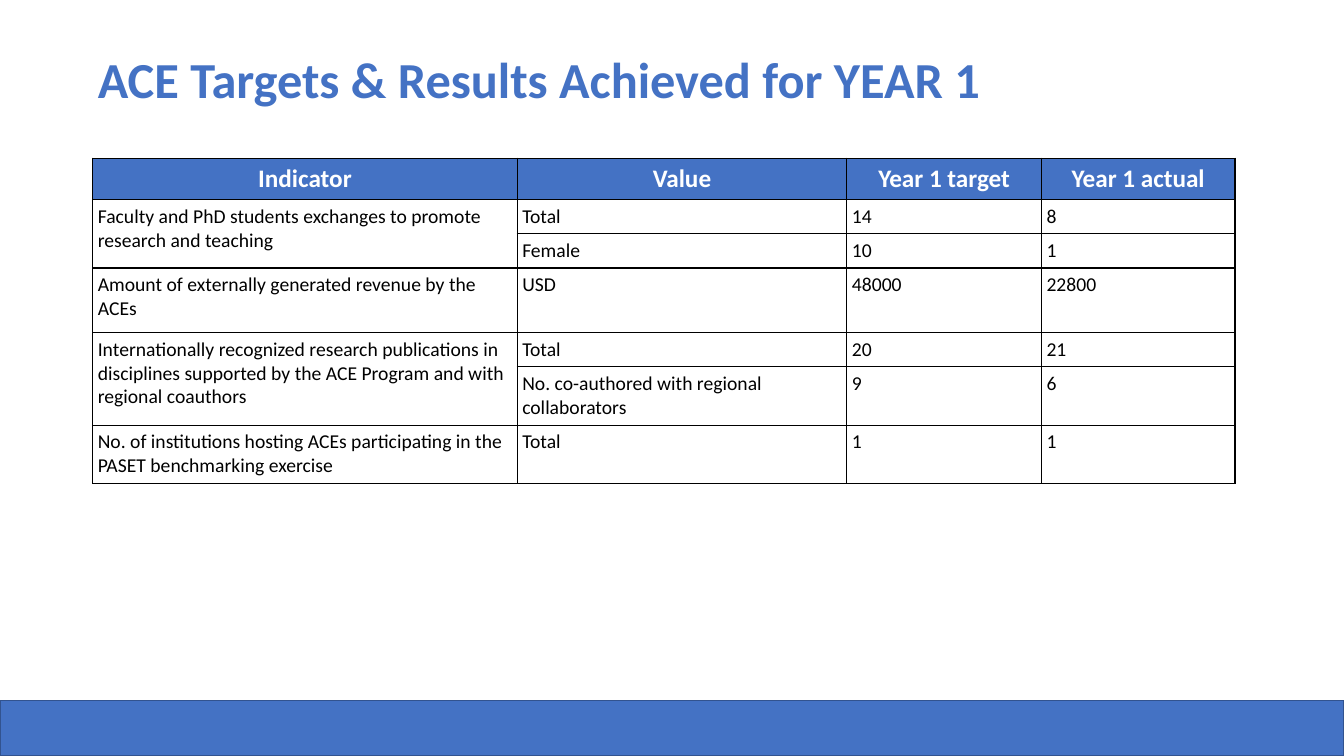
import pptx
import pptx.dml.color
import pptx.enum.shapes
import pptx.enum.text
import pptx.oxml
import pptx.oxml.ns
import pptx.util

Inches = pptx.util.Inches
Pt = pptx.util.Pt
FONT = "Calibri"
COLORS = {
    "blue": "4472C4",
    "edge": "32538F",
    "white": "FFFFFF",
    "black": "000000",
}
COLUMN_WIDTHS = [4.21, 3.27, 1.93, 1.92]
ROW_HEIGHTS = [0.41, 0.34, 0.34, 0.64, 0.34, 0.58, 0.58]
HEADER = ["Indicator", "Value", "Year 1 target", "Year 1 actual"]
INDICATORS = [
    ("Faculty and PhD students exchanges to promote research and teaching",
     [("Total", "14", "8"), ("Female", "10", "1")]),
    ("Amount of externally generated revenue by the ACEs",
     [("USD", "48000", "22800")]),
    ("Internationally recognized research publications in disciplines "
     "supported by the ACE Program and with regional coauthors",
     [("Total", "20", "21"),
      ("No. co-authored with regional collaborators", "9", "6")]),
    ("No. of institutions hosting ACEs participating in the PASET "
     "benchmarking exercise",
     [("Total", "1", "1")]),
]


def rgb(name):
    return pptx.dml.color.RGBColor.from_string(COLORS[name])


def format_text(tf, size, color, bold):
    for p in tf.paragraphs:
        for r in p.runs:
            r.font.name = FONT
            r.font.size = Pt(size)
            r.font.bold = bold
            r.font.color.rgb = rgb(color)


def set_margins(box):
    box.margin_left = box.margin_right = Inches(0.05)
    box.margin_top = box.margin_bottom = Inches(0.05)


def add_footer(slide, left, top, width, height):
    sp = slide.shapes.add_shape(
        pptx.enum.shapes.MSO_SHAPE.RECTANGLE,
        Inches(left), Inches(top), Inches(width), Inches(height))
    sp.shadow.inherit = False
    sp.fill.solid()
    sp.fill.fore_color.rgb = rgb("blue")
    sp.line.color.rgb = rgb("edge")
    sp.line.width = Pt(1)


def add_title(slide, left, top, width, height):
    sp = slide.shapes.add_textbox(
        Inches(left), Inches(top), Inches(width), Inches(height))
    tf = sp.text_frame
    tf.word_wrap = True
    tf.vertical_anchor = pptx.enum.text.MSO_ANCHOR.MIDDLE
    set_margins(tf)
    tf.text = "ACE Targets & Results Achieved for YEAR 1"
    tf.paragraphs[0].line_spacing = 0.9
    format_text(tf, 36, "blue", True)


def add_borders(cell):
    tc_pr = cell._tc.get_or_add_tcPr()
    for side in ("lnL", "lnR", "lnT", "lnB"):
        tc_pr.append(pptx.oxml.parse_xml(
            f'<a:{side} {pptx.oxml.ns.nsdecls("a")} w="{Pt(1)}">'
            f'<a:solidFill><a:srgbClr val="{COLORS["black"]}"/></a:solidFill>'
            f'</a:{side}>'))


def fill_cell(cell, text, is_header):
    set_margins(cell)
    add_borders(cell)
    cell.text = text
    if is_header:
        cell.fill.solid()
        cell.fill.fore_color.rgb = rgb("blue")
        cell.text_frame.paragraphs[0].alignment = pptx.enum.text.PP_ALIGN.CENTER
        format_text(cell.text_frame, 18, "white", True)
    else:
        cell.fill.background()
        format_text(cell.text_frame, 14, "black", False)


def add_results_table(slide, left, top):
    rows = [HEADER]
    spans = []
    for indicator, results in INDICATORS:
        spans.append((len(rows), len(rows) + len(results) - 1))
        for i, result in enumerate(results):
            rows.append(["" if i else indicator, *result])
    table = slide.shapes.add_table(
        len(rows), len(HEADER), Inches(left), Inches(top),
        Inches(sum(COLUMN_WIDTHS)), Inches(sum(ROW_HEIGHTS))).table
    table.first_row = False
    table.horz_banding = False
    for column, width in zip(table.columns, COLUMN_WIDTHS):
        column.width = Inches(width)
    for row, height in zip(table.rows, ROW_HEIGHTS):
        row.height = Inches(height)
    for i, values in enumerate(rows):
        for j, text in enumerate(values):
            fill_cell(table.cell(i, j), text, i == 0)
    for first, last in spans:
        if last > first:
            table.cell(first, 0).merge(table.cell(last, 0))


def main():
    prs = pptx.Presentation()
    prs.slide_width = Inches(13.33)
    prs.slide_height = Inches(7.5)
    slide = prs.slides.add_slide(prs.slide_layouts[6])
    add_footer(slide, 0, 6.95, 13.33, 0.55)
    add_title(slide, 0.92, 0.4, 11.5, 0.84)
    add_results_table(slide, 0.92, 1.57)
    prs.save("out.pptx")


if __name__ == "__main__":
    main()
